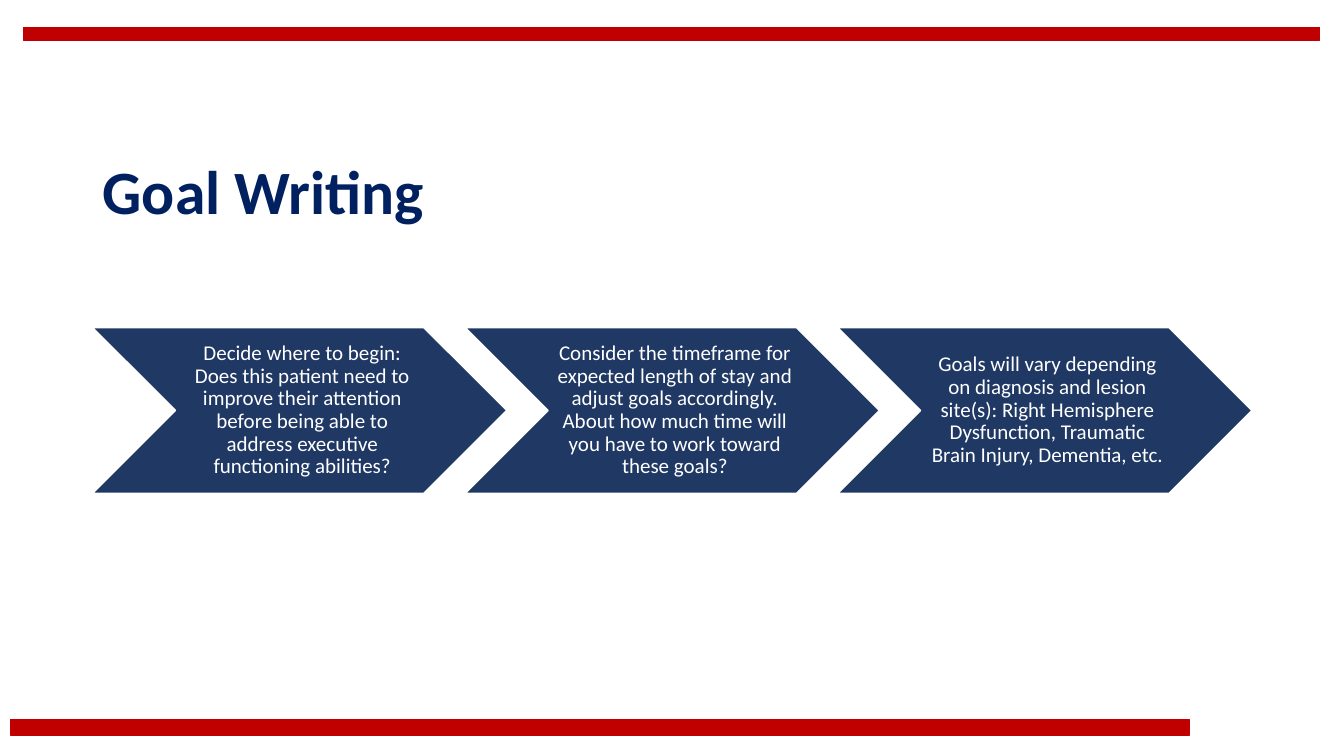
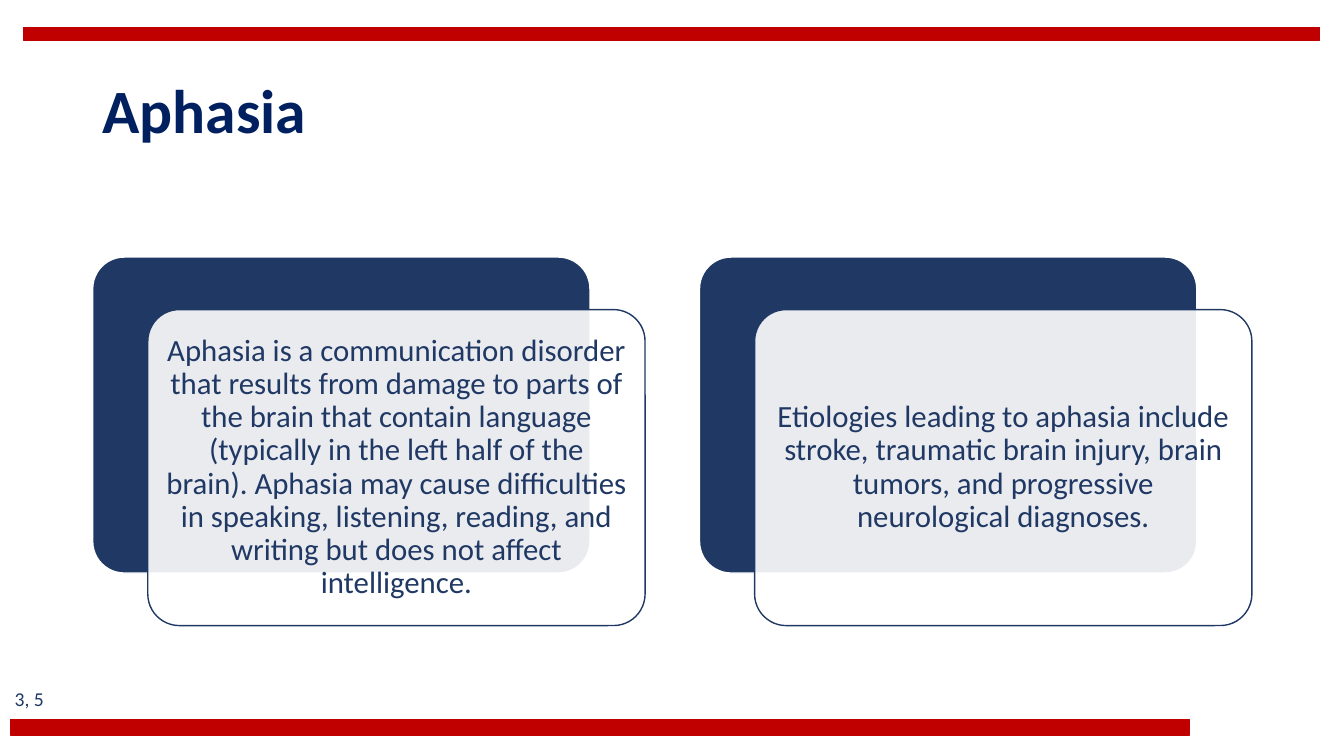
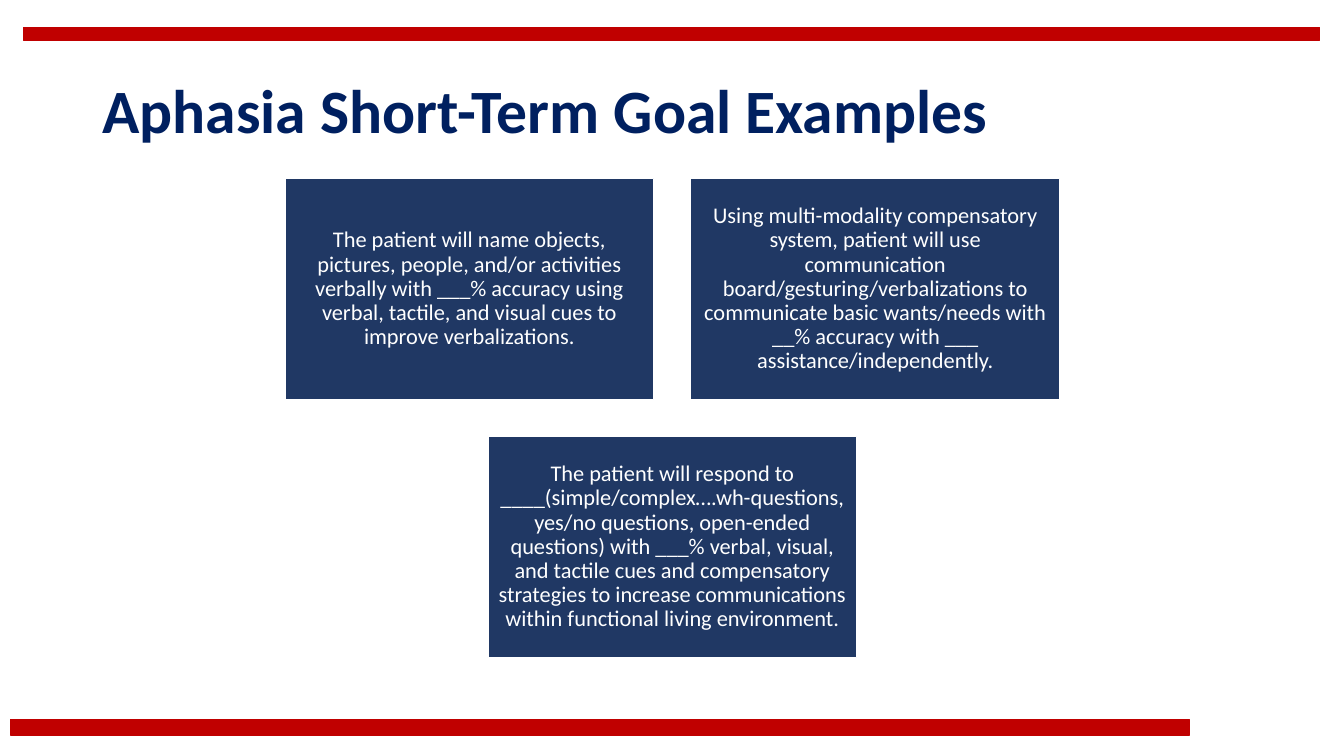
from lxml.etree import SubElement
from pptx import Presentation
from pptx.dml.color import RGBColor
from pptx.enum.shapes import MSO_SHAPE
from pptx.enum.text import MSO_ANCHOR, PP_ALIGN
from pptx.oxml.ns import qn
from pptx.util import Inches, Pt

COLORS = {"red": "C00000", "title": "002060", "navy": "203864", "white": "FFFFFF"}
FONT = "Calibri"
LEFT, WIDTH = 6.9, 86.25  # content frame, percent of slide width


class Deck:
    """Slide style and current slide; lengths are percent of the slide's size."""

    def __init__(self):
        self.prs = Presentation()
        self.prs.slide_width, self.prs.slide_height = Inches(13.33), Inches(7.5)
        self.s = None

    def place(self, x, y, w, h):
        sw, sh = self.prs.slide_width, self.prs.slide_height
        return [int(v * size / 100) for v, size in ((x, sw), (y, sh), (w, sw), (h, sh))]

    def color(self, name):
        return RGBColor.from_string(COLORS[name])

    def slide(self, title, title_top=5.3):
        self.s = self.prs.slides.add_slide(self.prs.slide_layouts[6])
        self.shape(MSO_SHAPE.RECTANGLE, (0.8, 95.2, 87.7, 2), "red", "red")
        self.shape(MSO_SHAPE.RECTANGLE, (1.75, 3.6, 96.45, 1.75), "red", "red")
        self.label(title, (LEFT, title_top, WIDTH, 19.3), 44, "title",
                   bold=True, align=PP_ALIGN.LEFT)

    def shape(self, kind, box, fill="navy", line="white", opacity=None):
        sp = self.s.shapes.add_shape(kind, *self.place(*box))
        sp.shadow.inherit = False
        sp.fill.solid()
        sp.fill.fore_color.rgb = self.color(fill)
        sp.line.color.rgb = self.color(line)
        sp.line.width = Pt(1)
        if opacity is not None:
            rgb = sp.element.spPr.find(qn("a:solidFill"))[0]
            SubElement(rgb, qn("a:alpha"), val=str(opacity * 1000))
        return sp

    def add_text(self, sp, text, size, color="white", bold=False,
                 align=PP_ALIGN.CENTER, insets=(0.1, 0.05, 0.1, 0.05)):
        tf = sp.text_frame
        tf.word_wrap = True
        tf.vertical_anchor = MSO_ANCHOR.MIDDLE
        (tf.margin_left, tf.margin_top,
         tf.margin_right, tf.margin_bottom) = map(Inches, insets)
        p = tf.paragraphs[0]
        p.alignment, p.line_spacing = align, 0.9
        r = p.add_run()
        r.text = text
        r.font.name, r.font.size, r.font.bold = FONT, Pt(size), bold
        r.font.color.rgb = self.color(color)

    def label(self, text, box, size, color, **style):
        sp = self.s.shapes.add_textbox(*self.place(*box))
        self.add_text(sp, text, size, color, **style)

    def chevrons(self, texts, top, height):
        """Fill the frame with chevrons that overlap by a tenth."""
        w = WIDTH / (0.9 * len(texts) + 0.1)
        for i, text in enumerate(texts):
            sp = self.shape(MSO_SHAPE.CHEVRON, (LEFT + 0.9 * w * i, top, w, height))
            self.add_text(sp, text, 15, insets=(0.07, 0.02, 0.02, 0.02))

    def cards(self, texts, top, w, h, dx, dy):
        """Spread cards over the frame, each with a translucent sheet shifted by dx, dy."""
        pitch = (WIDTH - w - dx) / (len(texts) - 1)
        for i, text in enumerate(texts):
            x = LEFT + pitch * i
            back = self.shape(MSO_SHAPE.ROUNDED_RECTANGLE, (x, top, w, h))
            front = self.shape(MSO_SHAPE.ROUNDED_RECTANGLE, (x + dx, top + dy, w, h),
                               "white", "navy", opacity=90)
            for sp in (back, front):
                sp.adjustments[0] = 0.1
            self.add_text(front, text, 22, "navy", insets=(0.09,) * 4)

    def boxes(self, rows, top, w, h, gap_x, gap_y):
        """Stack rows of boxes, each row centred on the frame."""
        for j, row in enumerate(rows):
            x = LEFT + (WIDTH - len(row) * (w + gap_x) + gap_x) / 2
            for i, text in enumerate(row):
                sp = self.shape(MSO_SHAPE.RECTANGLE,
                                (x + i * (w + gap_x), top + j * (h + gap_y), w, h))
                self.add_text(sp, text, 16, insets=(0.07,) * 4)


def main():
    deck = Deck()

    deck.slide("Goal Writing", title_top=16.1)
    deck.chevrons([
        "Decide where to begin: Does this patient need to improve their attention "
        "before being able to address executive functioning abilities?",
        "Consider the timeframe for expected length of stay and adjust goals accordingly. "
        "About how much time will you have to work toward these goals?",
        "Goals will vary depending on diagnosis and lesion site(s): Right Hemisphere "
        "Dysfunction, Traumatic Brain Injury, Dementia, etc.",
    ], top=43.35, height=21.9)

    deck.slide("Aphasia")
    deck.cards([
        "Aphasia is a communication disorder that results from damage to parts of the brain "
        "that contain language (typically in the left half of the brain). Aphasia may cause "
        "difficulties in speaking, listening, reading, and writing but does not affect "
        "intelligence.",
        "Etiologies leading to aphasia include stroke, traumatic brain injury, brain tumors, "
        "and progressive neurological diagnoses.",
    ], top=34, w=37, h=41.8, dx=4.1, dy=6.95)
    deck.label("3, 5", (0, 90.4, 4.35, 4.5), 14, "navy")

    deck.slide("Aphasia Short-Term Goal Examples")
    deck.boxes([
        ["The patient will name objects, pictures, people, and/or activities verbally with "
         "___% accuracy using verbal, tactile, and visual cues to improve verbalizations.",
         "Using multi-modality compensatory system, patient will use communication "
         "board/gesturing/verbalizations to communicate basic wants/needs with __% accuracy "
         "with ___ assistance/independently."],
        ["The patient will respond to ____(simple/complex….wh-questions, yes/no questions, "
         "open-ended questions) with ___% verbal, visual, and tactile cues and compensatory "
         "strategies to increase communications within functional living environment."],
    ], top=23.6, w=27.45, h=29.25, gap_x=2.75, gap_y=4.88)

    deck.prs.save("out.pptx")


if __name__ == "__main__":
    main()
